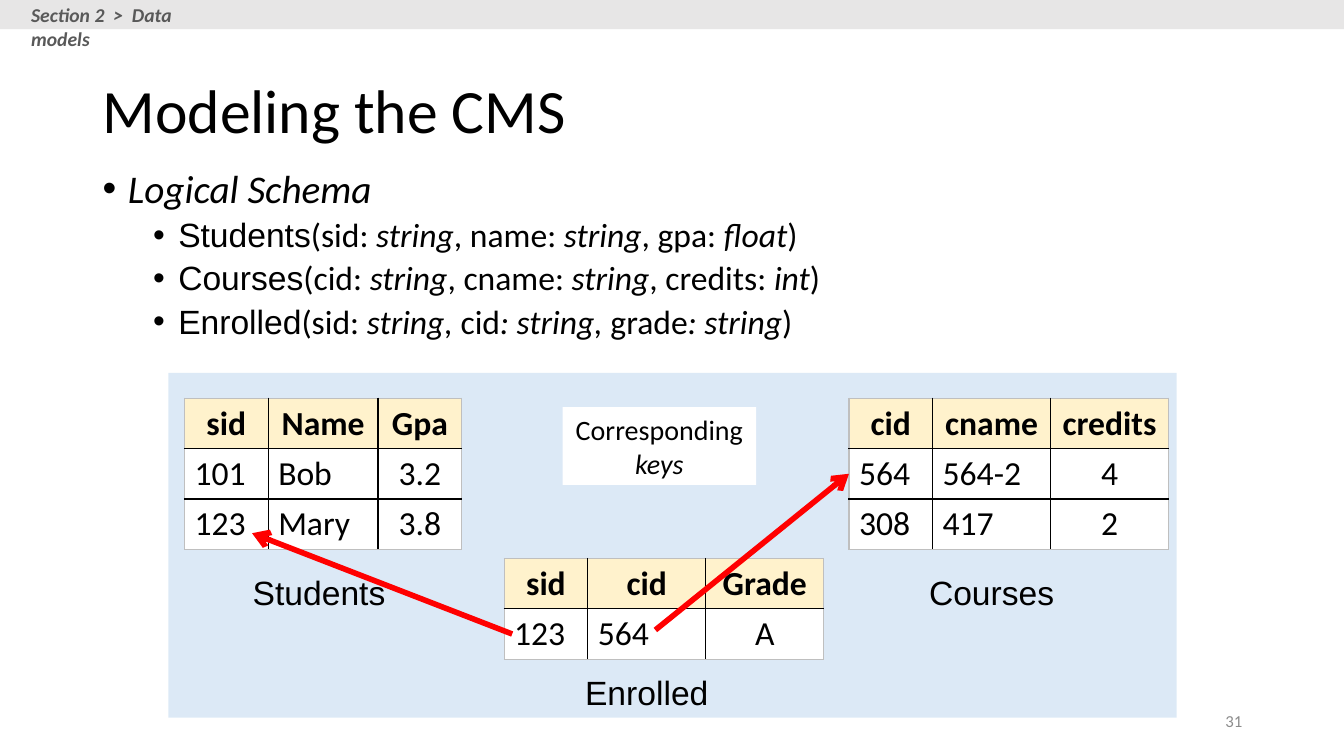
from dataclasses import dataclass

from lxml.etree import SubElement
from pptx import Presentation
from pptx.dml.color import RGBColor
from pptx.enum.shapes import MSO_CONNECTOR, MSO_SHAPE
from pptx.enum.text import MSO_ANCHOR, PP_ALIGN
from pptx.oxml.ns import qn
from pptx.util import Inches, Pt


@dataclass(frozen=True)
class Theme:
    """Colours, fonts and type sizes of the slide."""
    ink: str = "000000"
    paper: str = "FFFFFF"
    panel: str = "5B9BD5"
    head: str = "FFF2CC"
    band: str = "E7E6E6"
    crumb: str = "595959"
    faint: str = "8C8C8C"
    edge: str = "BFBFBF"
    arrow: str = "FF0000"
    font: str = "Calibri"
    label: str = "Arial"
    title: int = 44
    lead: int = 28
    text: int = 24
    note: int = 20
    trail: int = 14
    page: int = 12


THEME = Theme()
LEFT, MID, RIGHT = PP_ALIGN.LEFT, PP_ALIGN.CENTER, PP_ALIGN.RIGHT


def style(run, size, color=THEME.ink, font=THEME.font, bold=False, italic=False):
    """Give a run its font, size and colour."""
    run.font.size, run.font.name = Pt(size), font
    run.font.bold, run.font.italic = bold, italic
    run.font.color.rgb = RGBColor.from_string(color)


def write(para, text, size, **look):
    """Add text to a paragraph, with italics between underscores."""
    for i, part in enumerate(text.split("_")):
        if part:
            run = para.add_run()
            run.text = part
            style(run, size, **{"italic": i % 2 == 1, **look})


def frame(slide, box, anchor=MSO_ANCHOR.TOP):
    """Add a wrapping text box and return its text frame."""
    body = slide.shapes.add_textbox(*map(Inches, box)).text_frame
    body.word_wrap, body.vertical_anchor = True, anchor
    return body


def line(slide, box, text, size, align=LEFT, anchor=MSO_ANCHOR.TOP, **look):
    """Place a single paragraph of text in a box."""
    para = frame(slide, box, anchor).paragraphs[0]
    para.alignment = align
    write(para, text, size, **look)
    return para


def block(slide, box, color, alpha=None):
    """Draw a plain filled rectangle."""
    shape = slide.shapes.add_shape(MSO_SHAPE.RECTANGLE, *map(Inches, box))
    shape.shadow.inherit = False
    shape.fill.solid()
    shape.fill.fore_color.rgb = RGBColor.from_string(color)
    shape.line.fill.background()
    if alpha is not None:
        tint = shape.fill._xPr.find(".//" + qn("a:srgbClr"))
        SubElement(tint, qn("a:alpha"), val=str(alpha * 1000))
    return shape


def bullet(para, indent, space):
    """Turn a paragraph into a hanging bullet."""
    para.line_spacing, para.space_before = 0.9, Pt(space)
    props = para._p.get_or_add_pPr()
    props.set("marL", str(Inches(indent)))
    props.set("indent", str(Inches(-0.25)))
    SubElement(props, qn("a:buFont"), typeface="Arial")
    SubElement(props, qn("a:buChar"), char="•")


def schema(slide, box, lead, items):
    """List the relations of the schema under a lead line."""
    body = frame(slide, box)
    first = body.paragraphs[0]
    bullet(first, 0.25, 10)
    write(first, lead, THEME.lead)
    for name, fields in items:
        para = body.add_paragraph()
        para.level = 1
        bullet(para, 0.75, 5)
        write(para, name, THEME.text, font=THEME.label)
        write(para, fields, THEME.text)


def border(cell, sides):
    """Draw the cell borders, given a colour for each side."""
    props = cell._tc.get_or_add_tcPr()
    for i, (side, color) in enumerate(sides.items()):
        rule = props.makeelement(qn("a:" + side), {"w": str(Pt(1))})
        fill = SubElement(rule, qn("a:solidFill"))
        SubElement(fill, qn("a:srgbClr"), val=color)
        props.insert(i, rule)


def table(slide, left, top, widths, rows):
    """Draw a relation with a tinted header row."""
    high, wide = len(rows), len(widths)
    box = (left, top, sum(widths), 0.5 * high)
    grid = slide.shapes.add_table(high, wide, *map(Inches, box)).table
    for col, width in zip(grid.columns, widths):
        col.width = Inches(width)
    for r, row in enumerate(rows):
        grid.rows[r].height = Inches(0.5)
        for c, text in enumerate(row):
            cell = grid.cell(r, c)
            cell.text = text
            cell.fill.solid()
            cell.fill.fore_color.rgb = RGBColor.from_string(
                THEME.paper if r else THEME.head)
            para = cell.text_frame.paragraphs[0]
            para.alignment = MID if r == 0 or c == wide - 1 else LEFT
            style(para.runs[0], THEME.text, bold=r == 0)
            outer = {"lnL": c == 0, "lnR": c == wide - 1,
                     "lnT": r == 0, "lnB": r == high - 1}
            border(cell, {side: THEME.edge if out else THEME.ink
                          for side, out in outer.items()})


def arrow(slide, start, end):
    """Draw a red arrow between two matching keys."""
    link = slide.shapes.add_connector(
        MSO_CONNECTOR.STRAIGHT, *map(Inches, start + end))
    link.line.width = Pt(4)
    link.line.color.rgb = RGBColor.from_string(THEME.arrow)
    SubElement(link.line._get_or_add_ln(), qn("a:tailEnd"), type="arrow")
    SubElement(link._element.spPr, qn("a:effectLst"))


def banner(slide, wide, text):
    """Draw the top band with its section trail."""
    block(slide, (0, 0, wide, 0.29), THEME.band)
    line(slide, (0.21, -0.02, 2.18, 0.34), text, THEME.trail,
         color=THEME.crumb, bold=True, italic=True)


def model(slide, box):
    """Draw the three relations and the keys that join them."""
    x, y, _, _ = box
    block(slide, box, THEME.panel, 21)
    table(slide, x + 0.16, y + 0.25, (0.83, 1.09, 0.83),
          (("sid", "Name", "Gpa"), ("101", "Bob", "3.2"), ("123", "Mary", "3.8")))
    table(slide, x + 6.75, y + 0.25, (0.83, 1.17, 1.17),
          (("cid", "cname", "credits"), ("564", "564-2", "4"), ("308", "417", "2")))
    table(slide, x + 3.33, y + 1.84, (0.83, 1.17, 1.17),
          (("sid", "cid", "Grade"), ("123", "564", "A")))
    for name, dx, dy in (("Students", 0.58, 1.92), ("Courses", 7.25, 1.92),
                         ("Enrolled", 3.83, 2.92)):
        line(slide, (x + dx, y + dy, 1.83, 0.5), name, THEME.text, MID,
             font=THEME.label)
    arrow(slide, (x + 3.41, y + 2.59), (x + 0.83, y + 1.59))
    arrow(slide, (x + 4.83, y + 2.55), (x + 6.75, y + 1))
    note = block(slide, (x + 3.91, y + 0.34, 1.92, 0.77), THEME.paper)
    note.text_frame.word_wrap = True
    para = note.text_frame.paragraphs[0]
    para.alignment = MID
    write(para, "Corresponding _keys_", THEME.note)


def main():
    """Build the slide and save it."""
    deck = Presentation()
    deck.slide_width, deck.slide_height = Inches(13.33), Inches(7.5)
    slide = deck.slides.add_slide(deck.slide_layouts[6])
    title = line(slide, (0.92, 0.4, 11.5, 1.45), "Modeling the CMS",
                 THEME.title, anchor=MSO_ANCHOR.MIDDLE)
    title.line_spacing = 0.9
    schema(slide, (0.92, 1.63, 9, 1.95), "_Logical Schema_", (
        ("Students", "(sid: _string_, name: _string_, gpa: _float_)"),
        ("Courses", "(cid: _string_, cname: _string_, credits: _int_)"),
        ("Enrolled", "(sid: _string, _cid_: string, _grade_: string_)")))
    model(slide, (1.67, 3.7, 10, 3.42))
    line(slide, (9.42, 6.95, 3, 0.4), "31", THEME.page, RIGHT,
         MSO_ANCHOR.MIDDLE, color=THEME.faint)
    banner(slide, 13.33, "Section 2  >  Data models")
    deck.save("out.pptx")


if __name__ == "__main__":
    main()
